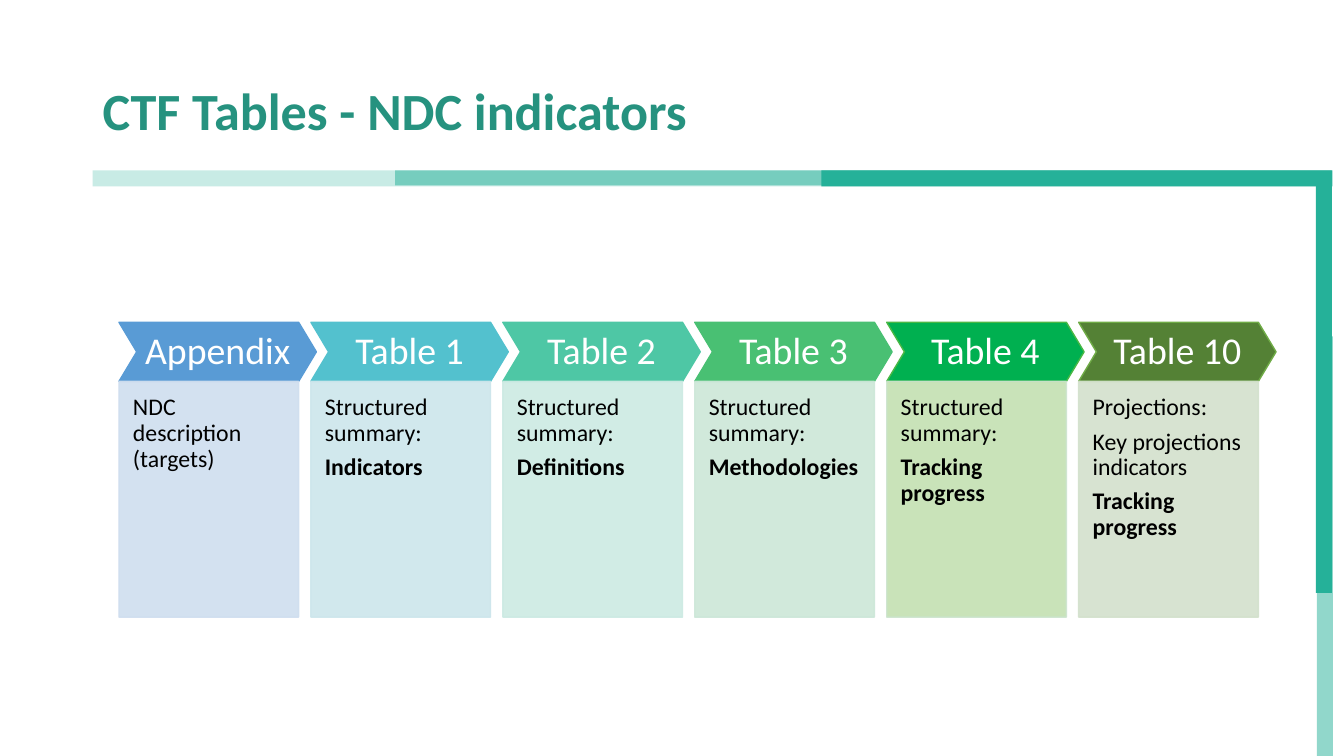
from pptx import Presentation
from pptx import util as u
from pptx.dml import color
from pptx.enum import shapes, text
from pptx.oxml import xmlchemy
from lxml import etree

Pt = u.Pt
FONT = "Calibri"
TEAL = "25B199"
DRAWING = "http://schemas.openxmlformats.org/drawingml/2006/main"

BARS = [
    ((796.3, 384.5, 300, 11.5), 90, 50),
    ((66.2, 121.7, 885, 11.5), 0, 25),
    ((282.2, 121.7, 669, 10.8), 0, 50),
    ((586.8, 121.7, 365, 11.5), 0, 100),
    ((795.6, 267.8, 300, 11.5), 90, 100),
]
STEPS = [
    ("Appendix", "599BD5", "599BD5", "CFDEEF", "CFDEEF",
     [("NDC description (targets)", False)]),
    ("Table 1", "53C1CE", "53C1CE", "CDE6EC", "CDE6EC",
     [("Structured summary:", False), ("Indicators", True)]),
    ("Table 2", "4EC7A5", "4EC7A5", "CCEAE3", "CCEAE3",
     [("Structured summary:", False), ("Definitions", True)]),
    ("Table 3", "49C073", "49C073", "CCE7D8", "CCE7D8",
     [("Structured summary:", False), ("Methodologies", True)]),
    ("Table 4", "00B050", "49B845", "C4E0B2", "CCE4CE",
     [("Structured summary:", False), ("Tracking progress", True)]),
    ("Table 10", "548135", "6FAB46", "D3E1CC", "D3E1CC",
     [("Projections:", False), ("Key projections indicators", False),
      ("Tracking progress", True)]),
]


def rgb(value):
    """Turn a hex string into a colour."""
    return color.RGBColor.from_string(value)


def paint(fill, value, opacity=100):
    """Fill with a solid colour at an opacity in percent."""
    fill.solid()
    fill.fore_color.rgb = rgb(value)
    if opacity < 100:
        for element in fill._xPr.iter(f"{{{DRAWING}}}srgbClr"):
            etree.SubElement(element, f"{{{DRAWING}}}alpha", val=str(opacity * 1000))


def add_block(slide, kind, box, fill, line=None, opacity=100):
    """Add a flat preset shape in the box."""
    shape = slide.shapes.add_shape(kind, *map(Pt, box))
    shape.shadow.inherit = False
    paint(shape.fill, fill, opacity)
    if line:
        shape.line.width = Pt(1)
        paint(shape.line.fill, line, opacity)
    else:
        shape.line.fill.background()
    return shape


def set_frame(frame, margins, anchor, wrap=True):
    """Set the margins, anchor and wrapping of a text frame."""
    frame.margin_left, frame.margin_top, frame.margin_right, frame.margin_bottom = map(Pt, margins)
    frame.vertical_anchor = anchor
    frame.word_wrap = wrap
    frame.auto_size = text.MSO_AUTO_SIZE.NONE


def write(paragraph, words, size, value, bold=False, align=text.PP_ALIGN.LEFT, before=0):
    """Write one formatted paragraph."""
    paragraph.text = words
    paragraph.alignment = align
    paragraph.line_spacing = 0.9
    paragraph.space_before = Pt(before)
    font = paragraph.font
    font.name, font.size, font.bold = FONT, Pt(size), bold
    font.color.rgb = rgb(value)


def add_frame_bars(slide):
    """Draw the teal bars under the title and down the right edge."""
    for box, rotation, opacity in BARS:
        bar = add_block(slide, shapes.MSO_SHAPE.RECTANGLE, box, TEAL, opacity=opacity)
        bar.rotation = rotation


def add_title(slide, box, words):
    """Place and format the title placeholder."""
    title = slide.shapes.title
    title.left, title.top, title.width, title.height = map(Pt, box)
    set_frame(title.text_frame, (7.2, 3.6, 7.2, 3.6), text.MSO_ANCHOR.MIDDLE)
    write(title.text_frame.paragraphs[0], words, 37.3, "26927F", bold=True)


def add_step(slide, box, step):
    """Draw a chevron heading over its description panel."""
    left, top, width, height = box
    heading, fill, line, panel_fill, panel_line, lines = step
    head_height = 42.2
    chevron = add_block(slide, shapes.MSO_SHAPE.CHEVRON,
                        (left, top, width, head_height), fill, line)
    chevron.adjustments[0] = 0.3
    set_frame(chevron.text_frame, (5, 5, 5, 5), text.MSO_ANCHOR.MIDDLE, wrap=False)
    write(chevron.text_frame.paragraphs[0], heading, 27, "FFFFFF", align=text.PP_ALIGN.CENTER)

    panel = add_block(slide, shapes.MSO_SHAPE.RECTANGLE,
                      (left, top + head_height, width - 0.3 * head_height, height - head_height),
                      panel_fill, panel_line, opacity=90)
    frame = panel.text_frame
    set_frame(frame, (10, 10, 10, 20), text.MSO_ANCHOR.TOP)
    for index, (words, bold) in enumerate(lines):
        paragraph = frame.add_paragraph() if index else frame.paragraphs[0]
        write(paragraph, words, 17, "000000", bold, before=6 if index else 0)


def add_steps(slide, box, steps):
    """Spread the steps evenly across the box."""
    left, top, width, height = box
    step_width = 141
    pitch = (width - step_width) / (len(steps) - 1)
    for index, step in enumerate(steps):
        add_step(slide, (left + index * pitch, top, step_width, height), step)


def main():
    """Build and save the presentation."""
    presentation = Presentation()
    presentation.slide_width, presentation.slide_height = Pt(960), Pt(540)
    slide = presentation.slides.add_slide(presentation.slide_layouts[5])
    add_frame_bars(slide)
    add_title(slide, (66.2, 28.8, 828, 104.4), "CTF Tables - NDC indicators")
    add_steps(slide, (85, 230.2, 826.5, 210.6), STEPS)
    presentation.save("out.pptx")


if __name__ == "__main__":
    main()
